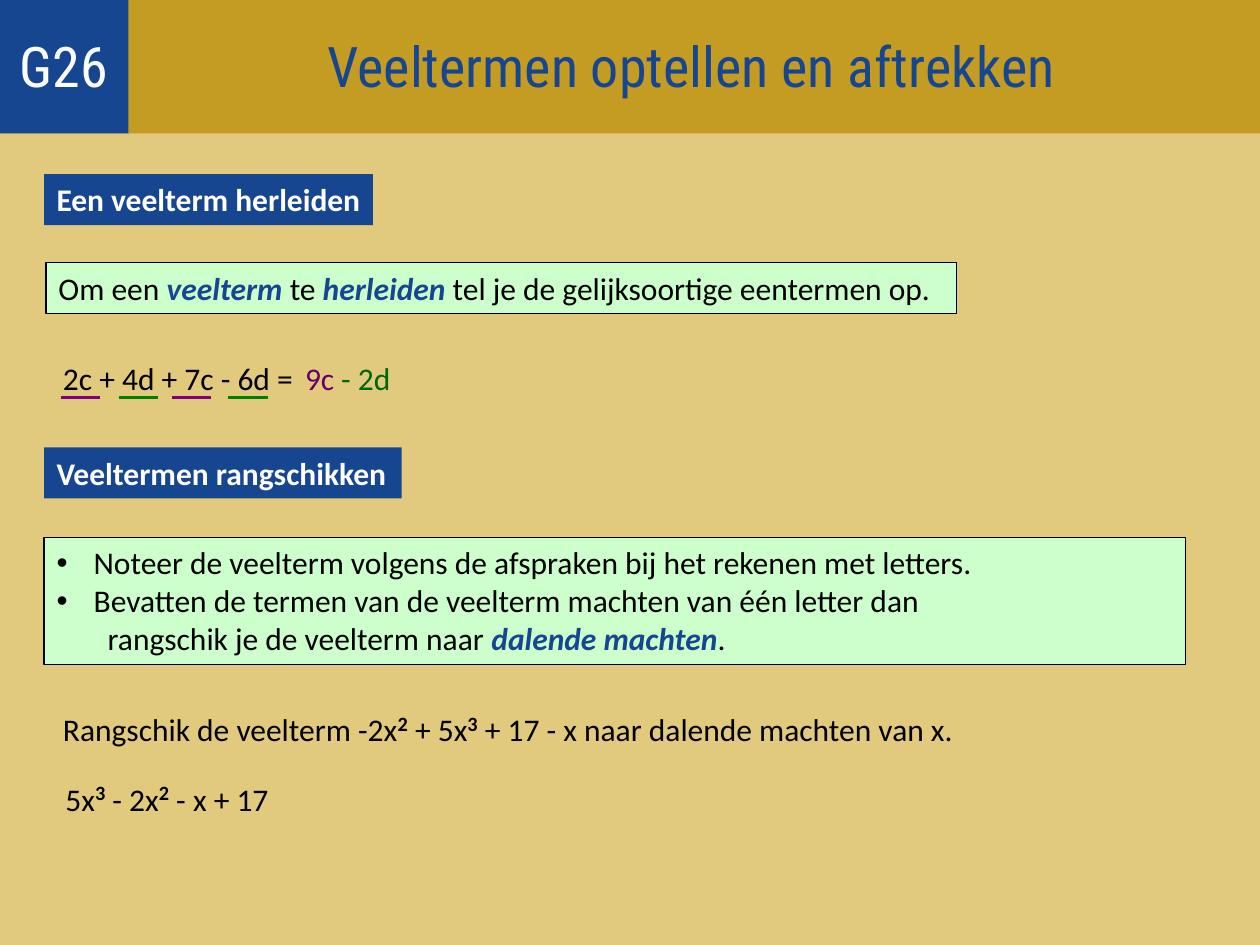
import pptx
import pptx.util
import pptx.dml.color
import pptx.enum.shapes
import pptx.enum.text
from lxml import etree
from pptx.util import Cm

RGBColor = pptx.dml.color.RGBColor
SAND = RGBColor(0xE1, 0xCA, 0x7D)
GOLD = RGBColor(0xC5, 0x9C, 0x22)
BLUE = RGBColor(0x17, 0x46, 0x91)
MINT = RGBColor(0xCC, 0xFF, 0xCC)
BLACK = RGBColor(0, 0, 0)
WHITE = RGBColor(0xFF, 0xFF, 0xFF)
OFF_WHITE = RGBColor(0xFC, 0xFD, 0xFE)
PURPLE = RGBColor(0x66, 0, 0x66)
GREEN = RGBColor(0, 0x66, 0)
PURPLE_LINE = RGBColor(0x80, 0, 0x80)
GREEN_LINE = RGBColor(0, 0x80, 0)

TERM = dict(color=BLUE, bold=True, italic=True)
POWER = dict(size=20, bold=True, baseline=30000)


def add_span(para, text, size=18, font="Calibri", color=BLACK, bold=False, italic=False, baseline=None):
    span = para.add_run()
    span.text = text
    span.font.size = pptx.util.Pt(size)
    span.font.name = font
    span.font.color.rgb = color
    span.font.bold = bold
    span.font.italic = italic
    if baseline:
        span.font._element.set("baseline", str(baseline))


def fill_para(para, spans, **style):
    for text, extra in spans:
        add_span(para, text, **{**style, **extra})


def add_panel(page, left, top, width, height, fill, outline=None):
    panel = page.shapes.add_shape(
        pptx.enum.shapes.MSO_SHAPE.RECTANGLE, Cm(left), Cm(top), Cm(width), Cm(height))
    panel.shadow.inherit = False
    panel.fill.solid()
    panel.fill.fore_color.rgb = fill
    if outline is None:
        panel.line.fill.background()
    else:
        panel.line.color.rgb = outline
        panel.line.width = pptx.util.Pt(0.75)
    return panel


def set_frame(box, wrap):
    frame = box.text_frame
    frame.word_wrap = wrap
    frame.auto_size = pptx.enum.text.MSO_AUTO_SIZE.SHAPE_TO_FIT_TEXT
    frame.vertical_anchor = pptx.enum.text.MSO_ANCHOR.TOP
    frame.paragraphs[0].alignment = pptx.enum.text.PP_ALIGN.LEFT
    return frame


def add_text(page, left, top, width, spans, wrap=False, **style):
    box = page.shapes.add_textbox(Cm(left), Cm(top), Cm(width), Cm(1.03))
    fill_para(set_frame(box, wrap).paragraphs[0], spans, **style)


def add_heading(page, left, top, width, text):
    panel = add_panel(page, left, top, width, 1.03, BLUE)
    fill_para(set_frame(panel, False).paragraphs[0], [(text, dict(color=WHITE, bold=True))])


def add_rule(page, left, top, width, spans):
    panel = add_panel(page, left, top, width, 1.03, MINT, BLACK)
    fill_para(set_frame(panel, True).paragraphs[0], spans)


def indent_para(para, left, hanging=0, bullet=None):
    props = para._p.get_or_add_pPr()
    props.set("marL", str(Cm(left)))
    props.set("indent", str(-Cm(hanging)))
    namespace = pptx.oxml.ns.nsdecls("a")
    if bullet:
        props.append(pptx.oxml.parse_xml(f'<a:buFont {namespace} typeface="Arial"/>'))
        props.append(pptx.oxml.parse_xml(f'<a:buChar {namespace} char="{bullet}"/>'))


def add_rule_list(page, left, top, width, height):
    panel = add_panel(page, left, top, width, height, MINT, BLACK)
    frame = set_frame(panel, True)
    bullet = dict(left=0.75, hanging=0.75, bullet="•")
    rows = [
        ([("Noteer de veelterm volgens de afspraken bij het rekenen met letters.", {})], bullet),
        ([("Bevatten de termen van de veelterm machten van één letter dan", {})], bullet),
        ([("rangschik je de veelterm naar ", {}), ("dalende machten", TERM), (".", {})],
         dict(left=1.03)),
    ]
    for index, (spans, indent) in enumerate(rows):
        para = frame.add_paragraph() if index else frame.paragraphs[0]
        para.alignment = pptx.enum.text.PP_ALIGN.LEFT
        indent_para(para, **indent)
        fill_para(para, spans)


def add_underline(page, left, top, width, color):
    line = page.shapes.add_connector(
        pptx.enum.shapes.MSO_CONNECTOR.STRAIGHT, Cm(left), Cm(top), Cm(left + width), Cm(top))
    line.line.color.rgb = color
    line.line.width = pptx.util.Pt(1.75)
    etree.SubElement(line._element.spPr, pptx.oxml.ns.qn("a:effectLst"))


def add_sum(page, left, top):
    add_text(page, left, top, 5.18, [("2c + 4d + 7c - 6d =", {})])
    add_text(page, left + 4.88, top, 1.09, [("9c", {})], color=PURPLE)
    add_text(page, left + 5.61, top, 1.5, [("- 2d", {})], color=GREEN)
    for offset, color in ((0.2, PURPLE_LINE), (1.37, GREEN_LINE),
                          (2.44, PURPLE_LINE), (3.58, GREEN_LINE)):
        add_underline(page, left + offset, top + 0.91, 0.8, color)


def add_header(page, left, top, width, height):
    code_width = 2.59
    band = add_panel(page, left, top, width, height, GOLD)
    band.text_frame.margin_left = Cm(code_width + 0.15)
    code = add_panel(page, left, top, code_width, height, BLUE)
    for panel, text, color in ((band, "Veeltermen optellen en aftrekken", BLUE),
                               (code, "G26", OFF_WHITE)):
        panel.text_frame.vertical_anchor = pptx.enum.text.MSO_ANCHOR.MIDDLE
        para = panel.text_frame.paragraphs[0]
        para.alignment = pptx.enum.text.PP_ALIGN.CENTER
        add_span(para, text, size=32, font="Roboto Condensed", color=color)


def add_reduce_section(page, left, top):
    add_heading(page, left, top, 6.63, "Een veelterm herleiden")
    add_rule(page, left + 0.04, top + 1.78, 18.36, [
        ("Om een ", {}), ("veelterm ", TERM), ("te ", {}), ("herleiden ", TERM),
        ("tel je de gelijksoortige eentermen op.", {})])
    add_sum(page, left + 0.13, top + 3.6)


def add_order_section(page, left, top):
    add_heading(page, left, top, 7.21, "Veeltermen rangschikken")
    add_rule_list(page, left, top + 1.81, 23.01, 2.57)
    add_text(page, left + 0.13, top + 5.1, 20.47, [
        ("Rangschik de veelterm -2x", {}), ("2", POWER), (" + 5x", {}), ("3", POWER),
        (" + 17 - x naar dalende machten van x.", {})], wrap=True)
    add_text(page, left + 0.18, top + 6.5, 4.67, [
        ("5x", {}), ("3", POWER), (" - 2x", {}), ("2", POWER), (" - x + 17", {})])


def main():
    deck = pptx.Presentation()
    deck.slide_width, deck.slide_height = Cm(25.4), Cm(19.05)
    page = deck.slides.add_slide(deck.slide_layouts[6])
    page.background.fill.solid()
    page.background.fill.fore_color.rgb = SAND
    add_header(page, 0, -0.08, 25.4, 2.77)
    add_reduce_section(page, 0.89, 3.51)
    add_order_section(page, 0.89, 9.02)
    deck.save("out.pptx")


if __name__ == "__main__":
    main()
